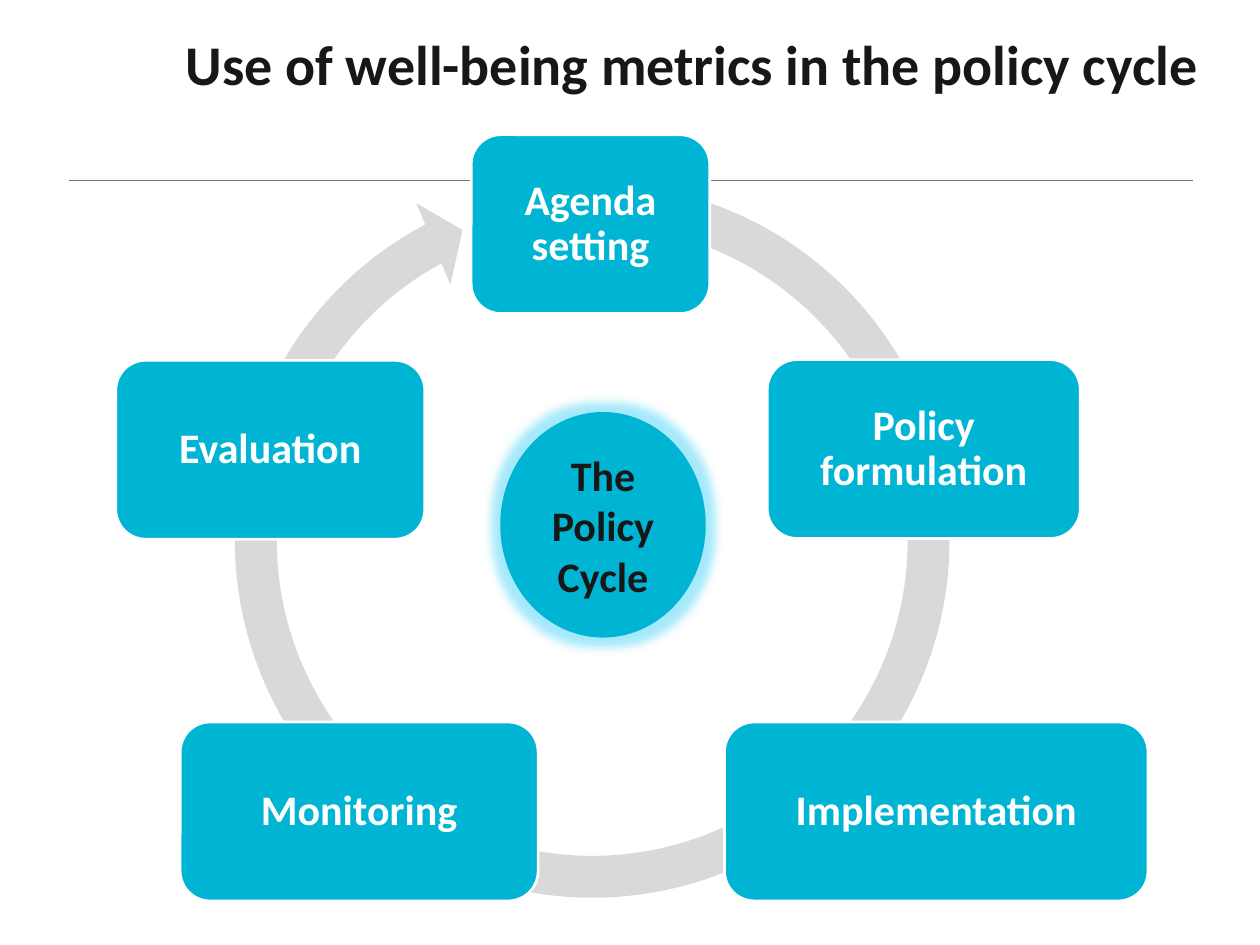
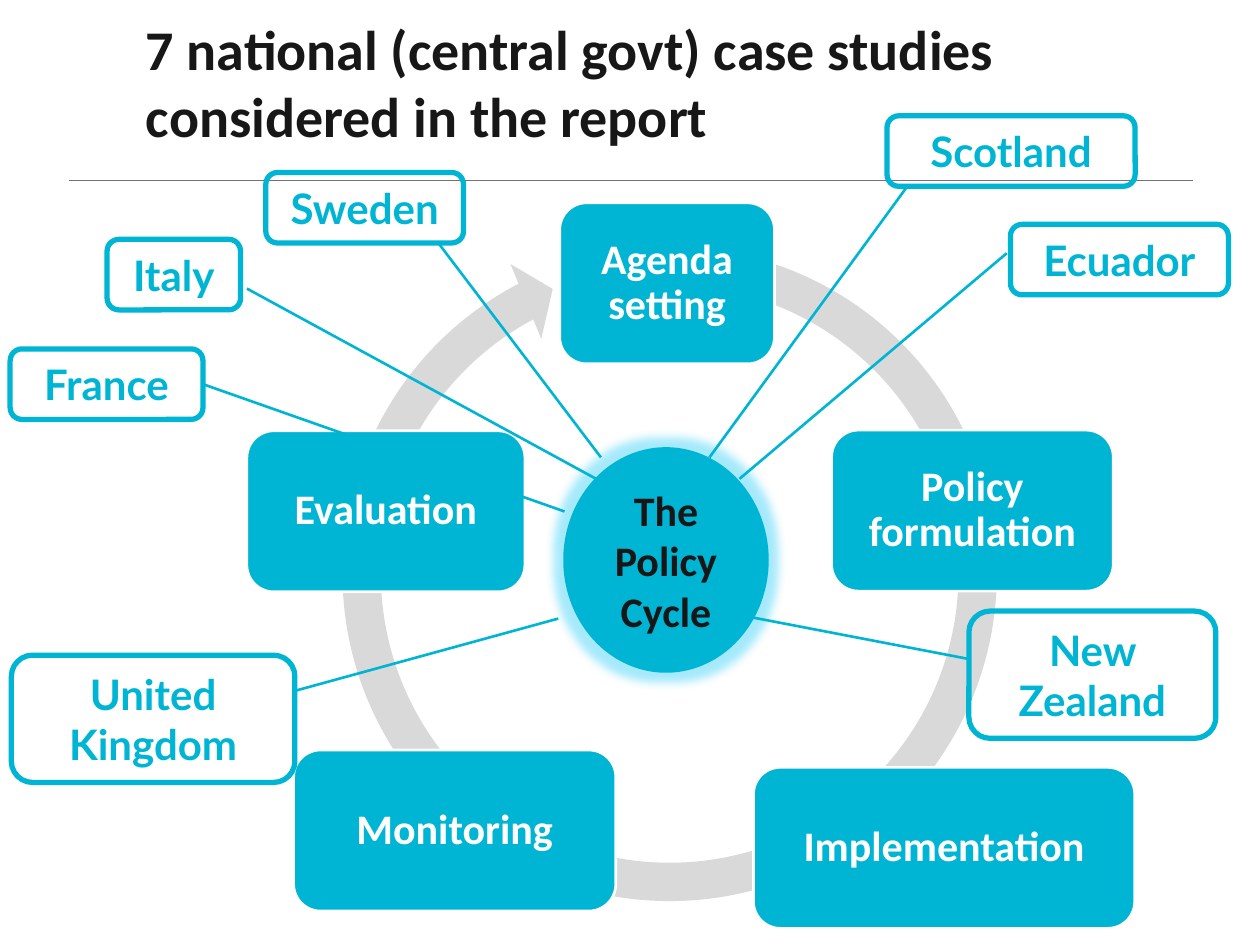
from lxml import etree
from pptx import Presentation
from pptx.dml.color import RGBColor
from pptx.enum.shapes import MSO_CONNECTOR, MSO_SHAPE
from pptx.enum.text import MSO_ANCHOR, PP_ALIGN
from pptx.oxml.ns import qn
from pptx.util import Pt

ROUND_BOX = MSO_SHAPE.ROUNDED_RECTANGLE
OVAL = MSO_SHAPE.OVAL
CYCLE_ARROW = MSO_SHAPE.CIRCULAR_ARROW
STRAIGHT = MSO_CONNECTOR.STRAIGHT
MIDDLE = MSO_ANCHOR.MIDDLE
CENTER, LEFT = PP_ALIGN.CENTER, PP_ALIGN.LEFT

TEAL = RGBColor(0x00, 0xB5, 0xD4)
GLOW = RGBColor(0x1E, 0xCA, 0xF7)
GREY = RGBColor(0xD9, 0xD9, 0xD9)
RULE_GREY = RGBColor(0x72, 0x72, 0x72)
INK = RGBColor(0x17, 0x17, 0x17)
WHITE = RGBColor(0xFF, 0xFF, 0xFF)

MAIN_FONT, LABEL_FONT = "Calibri", "Lato"
TITLE_SIZE, BODY_SIZE = 32, 24
STAGE_HEIGHT = 102.2
STAGE_WIDTHS = {
    "Agenda setting": 136.3,
    "Policy formulation": 178.8,
    "Implementation": 242,
    "Monitoring": 204.5,
    "Evaluation": 176.5,
}
LABEL_HEIGHT, TALL_LABEL_HEIGHT = 40.3, 72.7
RIGHT_SIDE = 3

COUNTRIES = [
    ("New Zealand", 553.7, 349.2, 141.1, TALL_LABEL_HEIGHT, (429.8, 352.8), (553.7, 376.6)),
    ("Ecuador", 577.4, 128.2, 124.6, LABEL_HEIGHT, (422.6, 273.6), (575.3, 144.7)),
    ("Scotland", 506.9, 66.2, 141.8, LABEL_HEIGHT, (405.4, 261.4), (518.4, 106.6)),
    ("United Kingdom", 6.5, 374.4, 162, TALL_LABEL_HEIGHT, (319, 353.5), (169.2, 394.6)),
    ("Italy", 61.2, 136.8, 76.3, LABEL_HEIGHT, (340.6, 273.6), (141.1, 164.9)),
    ("France", 5.8, 199.4, 110.2, LABEL_HEIGHT, (322.6, 292.3), None),
    ("Sweden", 151.9, 98.6, 113, LABEL_HEIGHT, (343.4, 261.4), (250.6, 139)),
]


def write(shape, text, color, size=BODY_SIZE, font=MAIN_FONT, align=CENTER):
    """Put one bold, wrapped, vertically centred paragraph in a shape."""
    frame = shape.text_frame
    frame.word_wrap = True
    frame.vertical_anchor = MIDDLE
    paragraph = frame.paragraphs[0]
    paragraph.alignment = align
    run = paragraph.add_run()
    run.text = text
    run.font.name = font
    run.font.size = Pt(size)
    run.font.bold = True
    run.font.color.rgb = color
    return paragraph


def add_figure(slide, kind, left, top, width, height, fill=None, line=None, weight=1.5):
    """Add a flat preset shape, unfilled or unlined where no colour is given."""
    figure = slide.shapes.add_shape(kind, Pt(left), Pt(top), Pt(width), Pt(height))
    figure.shadow.inherit = False
    if fill is None:
        figure.fill.background()
    else:
        figure.fill.solid()
        figure.fill.fore_color.rgb = fill
    if line is None:
        figure.line.fill.background()
    else:
        figure.line.color.rgb = line
        figure.line.width = Pt(weight)
    return figure


def add_line(slide, start, end, color, weight):
    """Add a straight line without a shadow."""
    line = slide.shapes.add_connector(STRAIGHT, *(Pt(value) for value in start + end))
    line.line.color.rgb = color
    line.line.width = Pt(weight)
    etree.SubElement(line._element.spPr, qn("a:effectLst"))
    return line


def add_title(slide, text, left, top, width):
    """Add the slide title."""
    title = slide.shapes.add_textbox(Pt(left), Pt(top), Pt(width), Pt(60.5))
    write(title, text, INK, TITLE_SIZE, align=LEFT)


def add_cycle_arrow(slide, left, top, size, head_angle, tail_angle):
    """Add the grey ring arrow, with its angles in degrees."""
    ring = add_figure(slide, CYCLE_ARROW, left, top, size, size, GREY)
    degree = 0.6
    values = (5.5 / 100, 5.51 * degree, head_angle * degree, tail_angle * degree, 5.8 / 100)
    for index, value in enumerate(values):
        ring.adjustments[index] = value


def add_stages(slide, corners, scale=1):
    """Add the five policy stages at their top left corners."""
    for (stage, width), (left, top) in zip(STAGE_WIDTHS.items(), corners):
        box = add_figure(slide, ROUND_BOX, left, top, width * scale, STAGE_HEIGHT * scale,
                         TEAL, WHITE)
        write(box, stage, WHITE).line_spacing = 0.9


def add_hub(slide, left, top):
    """Add the glowing centre of the cycle."""
    hub = add_figure(slide, OVAL, left, top, 115.9, 127.4, TEAL, TEAL)
    write(hub, "The Policy Cycle", INK)
    effects = hub._element.spPr.find(qn("a:effectLst"))
    glow = etree.SubElement(effects, qn("a:glow"), rad=str(Pt(11)))
    color = etree.SubElement(glow, qn("a:srgbClr"), val=str(GLOW))
    etree.SubElement(color, qn("a:alpha"), val="40000")


def add_country(slide, name, left, top, width, height):
    """Add an outlined country label."""
    label = add_figure(slide, ROUND_BOX, left, top, width, height, line=TEAL, weight=3)
    write(label, name, TEAL, font=LABEL_FONT)
    return label


def add_spoke(slide, label, hub_end, label_end):
    """Link the hub to a label, joining its right side when no end is given."""
    spoke = add_line(slide, hub_end, label_end or hub_end, TEAL, 1.5)
    if label_end is None:
        spoke.end_connect(label, RIGHT_SIDE)


def start_slide(deck):
    """Add a blank slide with the header rule."""
    slide = deck.slides.add_slide(deck.slide_layouts[6])
    add_line(slide, (39.6, 103), (681.8, 103), RULE_GREY, 0.5)
    return slide


def build_policy_cycle(deck):
    """Build the slide on metrics in the policy cycle."""
    slide = start_slide(deck)
    add_cycle_arrow(slide, 121, 91.4, 434.9, 241.81, 282.57)
    add_stages(slide, [(269.3, 77), (438.5, 205.5), (414, 412.6), (103, 412.6), (66.2, 205.9)])
    add_hub(slide, 286.6, 236.2)
    add_title(slide, "Use of well-being metrics in the policy cycle", 99, 5.8, 614)


def build_case_studies(deck):
    """Build the slide on the national case studies."""
    slide = start_slide(deck)
    add_cycle_arrow(slide, 183.6, 128.9, 398.2, 242.18, 282.36)
    add_stages(slide, [(319.9, 115.9), (475.2, 245.8), (430.6, 438.5), (167.8, 428.6),
                       (141.1, 246.2)], scale=0.9)
    labels = [add_country(slide, *country[:5]) for country in COUNTRIES]
    add_hub(slide, 322.6, 256.3)
    for label, country in zip(labels, COUNTRIES):
        add_spoke(slide, label, *country[5:])
    add_title(slide, "7 national (central govt) case studies considered in the report",
              76.3, 16.6, 607)


def main():
    """Build and save the deck."""
    deck = Presentation()
    deck.slide_width, deck.slide_height = Pt(720), Pt(540)
    build_policy_cycle(deck)
    build_case_studies(deck)
    deck.save("out.pptx")


if __name__ == "__main__":
    main()
